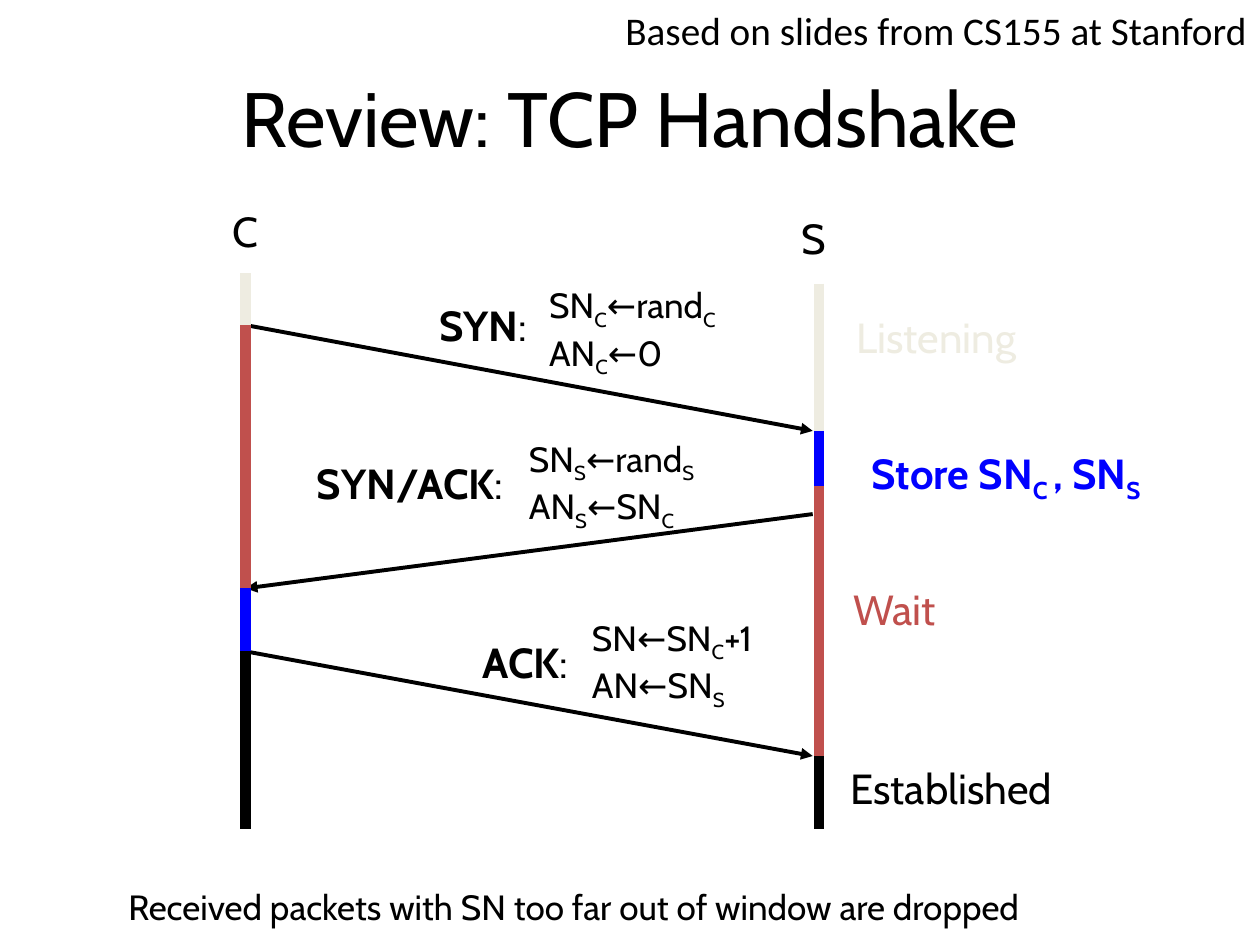
"""Build a slide showing the TCP handshake as a sequence diagram."""
from lxml import etree
from pptx import Presentation
from pptx.dml.color import RGBColor
from pptx.enum import shapes, text
from pptx.oxml import ns
from pptx.util import Inches, Pt

COLORS = {"ink": "000000", "listen": "EEECE1", "store": "0000FF", "wait": "C0504D"}
LEFT, CENTER, RIGHT = text.PP_ALIGN.LEFT, text.PP_ALIGN.CENTER, text.PP_ALIGN.RIGHT


def add_text(box, lines, size=24, color="ink", bold=False, align=CENTER, font="Cabin"):
    """Add a text box; every second piece between bars is a subscript."""
    sp = s.shapes.add_textbox(*map(Inches, box))
    tf = sp.text_frame
    tf.word_wrap = False
    for i, line in enumerate(lines):
        p = tf.paragraphs[0] if i == 0 else tf.add_paragraph()
        p.alignment = align
        for j, piece in enumerate(line.split("|")):
            r = p.add_run()
            r.text = piece
            r.font.name, r.font.size, r.font.bold = font, Pt(size), bold
            r.font.color.rgb = RGBColor.from_string(COLORS[color])
            if j % 2:
                r._r.get_or_add_rPr().set("baseline", "-25000")
    return tf


def add_line(x1, y1, x2, y2, color, width, arrow=False):
    """Add a straight line, with an arrowhead at its end if asked."""
    c = s.shapes.add_connector(shapes.MSO_CONNECTOR.STRAIGHT, *map(Inches, (x1, y1, x2, y2)))
    c.line.color.rgb = RGBColor.from_string(COLORS[color])
    c.line.width = Pt(width)
    if arrow:
        etree.SubElement(c.line._get_or_add_ln(), ns.qn("a:tailEnd"), type="triangle")
    etree.SubElement(c._element.spPr, ns.qn("a:effectLst"))


prs = Presentation()
prs.slide_width, prs.slide_height = Inches(10), Inches(7.5)
s = prs.slides.add_slide(prs.slide_layouts[5])

title = s.shapes.title
title.left, title.top, title.width, title.height = map(Inches, (0.5, 0.3, 9, 1.25))
title.text_frame.text = "Review: TCP Handshake"
f = title.text_frame.paragraphs[0].runs[0].font
f.name, f.size = "Cabin", Pt(44)
f.color.rgb = RGBColor.from_string(COLORS["ink"])

client_x, server_x, server_edge = 1.95, 6.5, 6.45
for x1, y1, x2, y2 in [
    (client_x, 2.58, server_edge, 3.42),
    (server_edge, 4.08, client_x, 4.67),
    (client_x, 5.17, server_edge, 6),
]:
    add_line(x1, y1, x2, y2, "ink", 2.25, arrow=True)

timelines = [
    (client_x, [2.17, 2.58, 4.67, 5.17, 6.58], ["listen", "wait", "store", "ink"]),
    (server_x, [2.25, 3.42, 3.86, 6, 6.58], ["listen", "store", "wait", "ink"]),
]
for x, ys, states in timelines:
    for y1, y2, state in zip(ys, ys[1:], states):
        add_line(x, y1, x, y2, state, 6)

add_text((1.75, 1.58, 0.4, 0.5), ["C"])
add_text((6.26, 1.64, 0.39, 0.5), ["S"])

messages = [
    ("SYN", (3.33, 2.33, 1.01, 0.5), (4.26, 2.2, 1.59, 0.77), ["SN|C|←rand|C", "AN|C|←0"]),
    ("SYN/ACK", (2.31, 3.58, 1.89, 0.5), (4.1, 3.42, 1.57, 0.77), ["SN|S|←rand|S", "AN|S|←SN|C"]),
    ("ACK", (3.67, 5, 1, 0.5), (4.6, 4.84, 1.63, 0.77), ["SN←SN|C|+1", "AN←SN|S"]),
]
for name, label_box, field_box, fields in messages:
    p = add_text(label_box, [name], bold=True).paragraphs[0]
    r = p.add_run()
    r.text = ":"
    r.font.name, r.font.size = "Cabin", Pt(24)
    r.font.color.rgb = RGBColor.from_string(COLORS["ink"])
    add_text(field_box, fields, size=20, align=LEFT)

add_text((6.67, 2.42, 1.52, 0.5), ["Listening"], color="listen")
add_text((6.64, 3.5, 2.69, 0.5), ["Store SN|C |, SN|S"], color="store", bold=True)
add_text((6.67, 4.58, 0.86, 0.5), ["Wait"], color="wait")
add_text((6.62, 6, 1.86, 0.5), ["Established"])

add_text((0.92, 6.98, 7.72, 0.44),
         ["Received packets with SN too far out of window are dropped"], size=20, align=LEFT)
tf = add_text((0, 0, 10, 0.42), ["Based on slides from CS155 at Stanford"],
              size=22.4, align=RIGHT, font="Calibri")
tf.word_wrap = True

prs.save("out.pptx")
